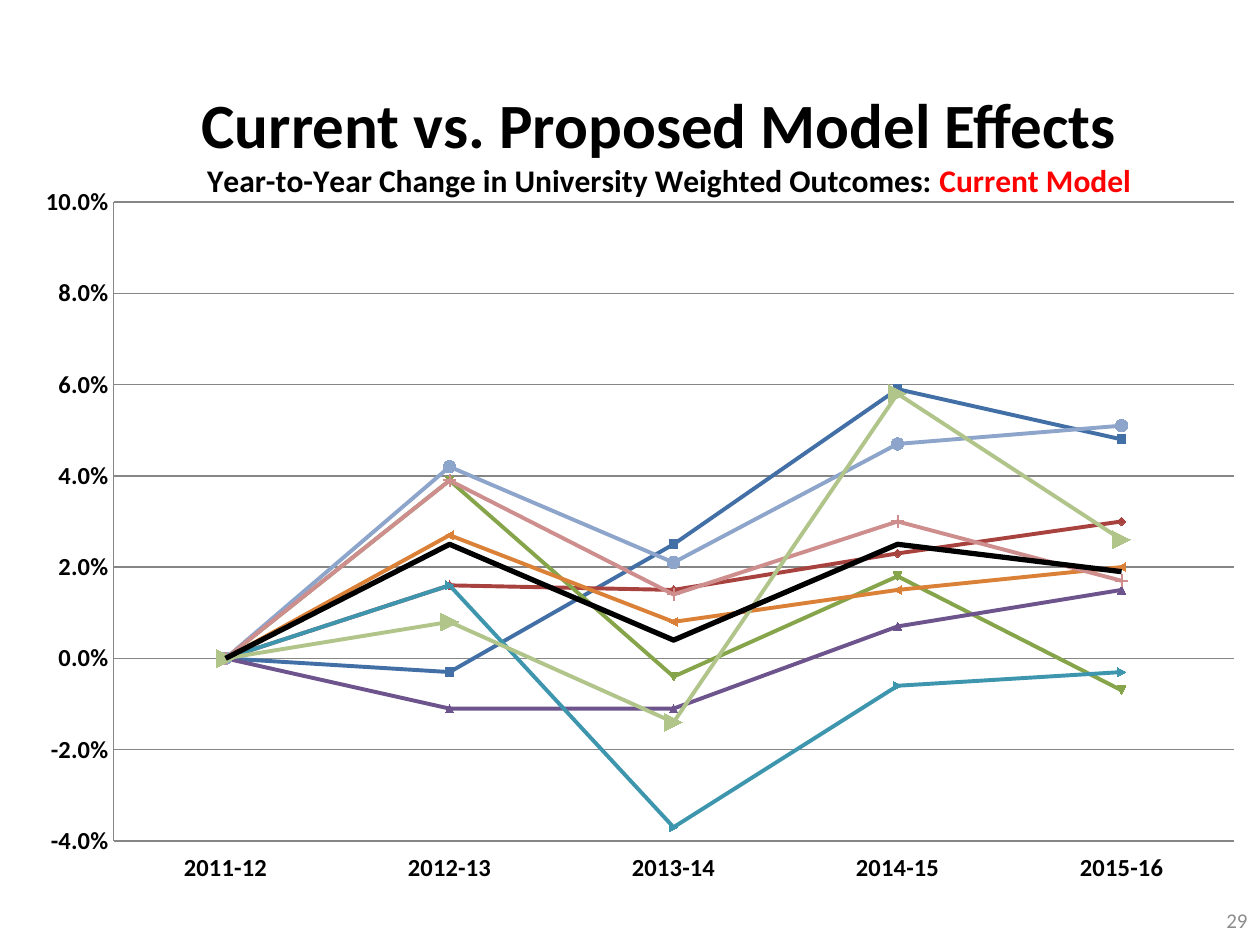
from lxml import etree
from pptx import Presentation
from pptx.chart.data import CategoryChartData
from pptx.dml.color import RGBColor
from pptx.enum.chart import XL_CHART_TYPE, XL_MARKER_STYLE, XL_TICK_LABEL_POSITION, XL_TICK_MARK
from pptx.enum.text import MSO_ANCHOR, PP_ALIGN
from pptx.oxml.ns import qn
from pptx.util import Pt

LINE_MARKERS = XL_CHART_TYPE.LINE_MARKERS
LOW = XL_TICK_LABEL_POSITION.LOW
NO_TICK = XL_TICK_MARK.NONE
CIRCLE, PLUS, DOT = XL_MARKER_STYLE.CIRCLE, XL_MARKER_STYLE.PLUS, XL_MARKER_STYLE.DOT
NO_MARKER = XL_MARKER_STYLE.NONE
MIDDLE = MSO_ANCHOR.MIDDLE
CENTER, RIGHT = PP_ALIGN.CENTER, PP_ALIGN.RIGHT

FONT = "Calibri"
BLACK = RGBColor(0x00, 0x00, 0x00)
RED = RGBColor(0xFF, 0x00, 0x00)
GRAY = RGBColor(0x8C, 0x8C, 0x8C)
GRID = RGBColor(0x86, 0x86, 0x86)
BLUE = RGBColor(0x41, 0x6F, 0xA6)
BRICK = RGBColor(0xA8, 0x42, 0x3F)
GREEN = RGBColor(0x86, 0xA4, 0x4A)
PURPLE = RGBColor(0x6E, 0x54, 0x8D)
TEAL = RGBColor(0x3D, 0x96, 0xAE)
ORANGE = RGBColor(0xDA, 0x81, 0x37)
LIGHT_BLUE = RGBColor(0x8E, 0xA5, 0xCB)
PINK = RGBColor(0xCE, 0x8E, 0x8D)
LIGHT_GREEN = RGBColor(0xB1, 0xC5, 0x8B)

YEARS = ["2011-12", "2012-13", "2013-14", "2014-15", "2015-16"]

# Values, colour, line width, marker style (None is automatic), marker size
SERIES = [
    ([0, -0.003, 0.025, 0.059, 0.048], BLUE, 2.25, None, 5),
    ([0, 0.016, 0.015, 0.023, 0.03], BRICK, 2.25, None, 5),
    ([0, 0.039, -0.004, 0.018, -0.007], GREEN, 2.25, None, 5),
    ([0, -0.011, -0.011, 0.007, 0.015], PURPLE, 2.25, None, 5),
    ([0, 0.016, -0.037, -0.006, -0.003], TEAL, 2.25, None, 5),
    ([0, 0.027, 0.008, 0.015, 0.02], ORANGE, 2.25, None, 5),
    ([0, 0.042, 0.021, 0.047, 0.051], LIGHT_BLUE, 2.25, CIRCLE, 7),
    ([0, 0.039, 0.014, 0.03, 0.017], PINK, 2.25, PLUS, 7),
    ([0, 0.008, -0.014, 0.058, 0.026], LIGHT_GREEN, 2.25, DOT, 10),
    ([0, 0.025, 0.004, 0.025, 0.019], BLACK, 3, NO_MARKER, 5),
]


def style_font(font, size, color, bold=False):
    font.name = FONT
    font.size = Pt(size)
    font.bold = bold
    font.color.rgb = color


def add_run(p, text, size, color, bold=False):
    r = p.add_run()
    r.text = text
    style_font(r.font, size, color, bold)


def add_text(slide, box, text, size, color, align, bold=False):
    tf = slide.shapes.add_textbox(*map(Pt, box)).text_frame
    tf.word_wrap = True
    tf.vertical_anchor = MIDDLE
    p = tf.paragraphs[0]
    p.alignment = align
    add_run(p, text, size, color, bold)


def set_layout(parent, previous, **settings):
    """Place a chart part by hand, right after the element it must follow."""
    for old in parent.findall(qn("c:layout")):
        parent.remove(old)
    layout = etree.Element(qn("c:layout"))
    manual = etree.SubElement(layout, qn("c:manualLayout"))
    for tag, value in settings.items():
        etree.SubElement(manual, qn(f"c:{tag}")).set("val", str(value))
    if previous is None:
        parent.insert(0, layout)
    else:
        previous.addnext(layout)


def style_axis(axis):
    axis.major_tick_mark = NO_TICK
    axis.minor_tick_mark = NO_TICK
    axis.format.line.color.rgb = GRID
    axis.format.line.width = Pt(0.75)
    style_font(axis.tick_labels.font, 14, BLACK, True)


def style_series(series, color, width, marker, size):
    series.smooth = False
    series.format.line.color.rgb = color
    series.format.line.width = Pt(width)
    if marker is not None:
        series.marker.style = marker
    if marker != NO_MARKER:
        series.marker.size = size
        series.marker.format.fill.solid()
        series.marker.format.fill.fore_color.rgb = color
        series.marker.format.line.color.rgb = color


def add_line_chart(slide, box):
    data = CategoryChartData(number_format="0.0%")
    data.categories = YEARS
    for number, (values, *_) in enumerate(SERIES, 1):
        data.add_series(f"Series {number}", values)
    chart = slide.shapes.add_chart(LINE_MARKERS, *map(Pt, box), data).chart
    style_font(chart.font, 10, BLACK)
    chart.has_legend = False
    chart.plots[0].vary_by_categories = False

    # Chart title
    chart.has_title = True
    title = chart.chart_title
    title.include_in_layout = True
    p = title.text_frame.paragraphs[0]
    add_run(p, "Year-to-Year Change in University Weighted Outcomes: ", 18, BLACK, True)
    add_run(p, "Current Model", 18, RED, True)
    title_xml = title._element
    set_layout(title_xml, title_xml.find(qn("c:tx")),
               xMode="edge", yMode="edge", x=0.16, y=0.01)

    # Axes and gridlines
    style_axis(chart.category_axis)
    chart.category_axis.tick_label_position = LOW
    values = chart.value_axis
    style_axis(values)
    values.minimum_scale, values.maximum_scale, values.major_unit = -0.04, 0.1, 0.02
    values.tick_labels.number_format = "0.0%"
    values.tick_labels.number_format_is_linked = False
    values.has_major_gridlines = True
    values.major_gridlines.format.line.color.rgb = GRID
    values.major_gridlines.format.line.width = Pt(0.75)

    # Plot area and series
    plot_area = chart._chartSpace.find(".//" + qn("c:plotArea"))
    set_layout(plot_area, None, layoutTarget="inner", xMode="edge", yMode="edge",
               x=0.088, y=0.072, w=0.898, h=0.861)
    for series, (_, *look) in zip(chart.plots[0].series, SERIES):
        style_series(series, *look)


def main():
    prs = Presentation()
    prs.slide_width, prs.slide_height = Pt(720), Pt(540)
    slide = prs.slides.add_slide(prs.slide_layouts[6])

    # Heading
    add_text(slide, (52.56, 25.2, 648, 90), "Current vs. Proposed Model Effects",
             36, BLACK, CENTER, True)
    # Slide number
    add_text(slide, (552.24, 511.2, 167.76, 28.8), "29", 12, GRAY, RIGHT)
    # Yearly changes
    add_line_chart(slide, (2.16, 84.96, 712.8, 424.08))

    prs.save("out.pptx")


if __name__ == "__main__":
    main()
